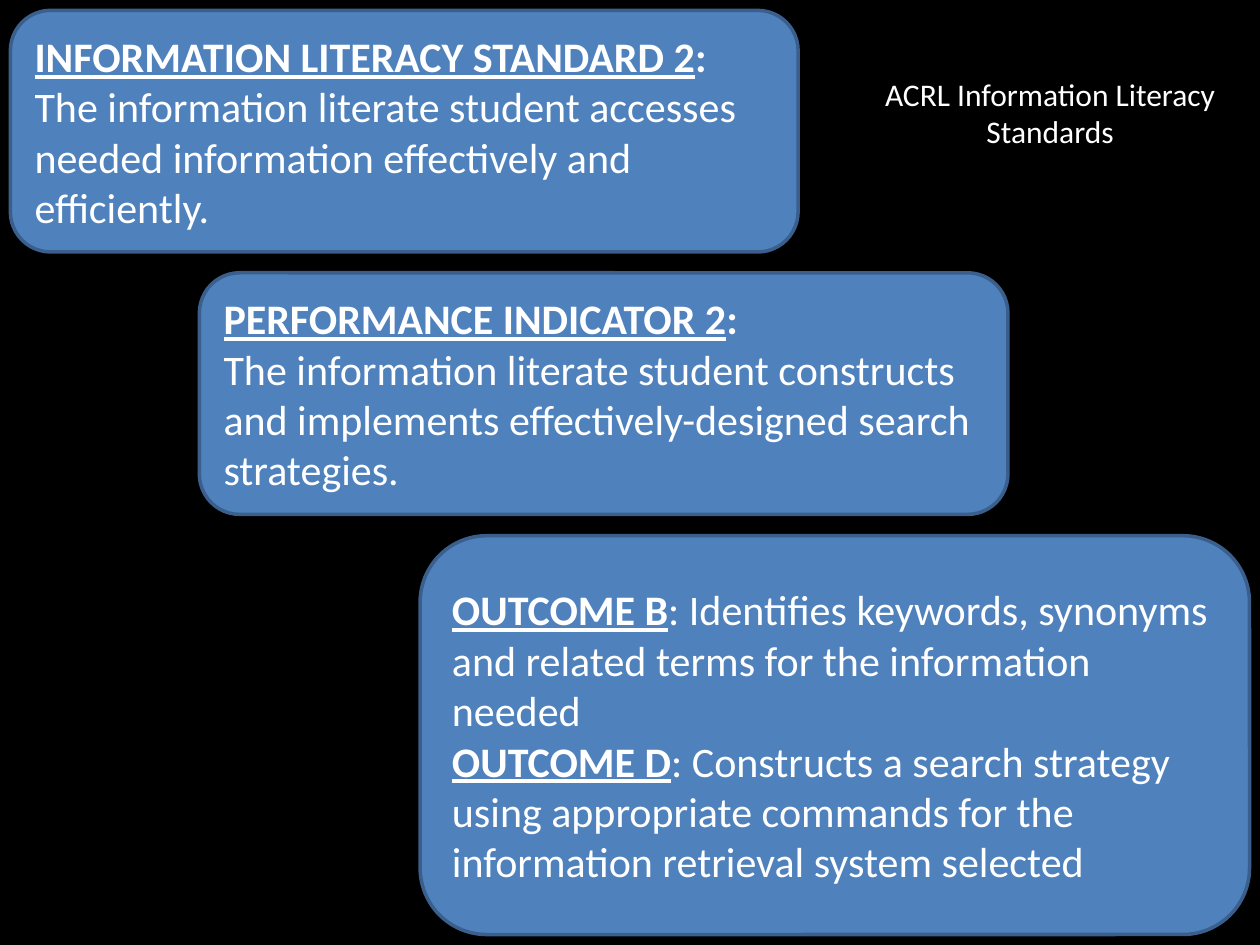
from dataclasses import dataclass

from pptx import Presentation
from pptx.dml.color import RGBColor
from pptx.enum.shapes import MSO_SHAPE
from pptx.enum.text import MSO_ANCHOR, MSO_AUTO_SIZE, PP_ALIGN
from pptx.slide import Slide
from pptx.text.text import TextFrame
from pptx.util import Cm, Pt

FONT_NAME = "Calibri"
BACKGROUND = "000000"
CARD_FILL = "4F81BD"
CARD_LINE = "3A5F8C"
TEXT_COLOR = "FFFFFF"


@dataclass(frozen=True)
class TextRun:
    text: str
    bold: bool = False
    underline: bool = False


@dataclass(frozen=True)
class Box:
    left: float
    top: float
    width: float
    height: float

    def lengths(self) -> tuple[Cm, Cm, Cm, Cm]:
        return Cm(self.left), Cm(self.top), Cm(self.width), Cm(self.height)


@dataclass(frozen=True)
class Card:
    box: Box
    paragraphs: list[list[TextRun]]


def heading(text: str) -> TextRun:
    return TextRun(text, bold=True, underline=True)


CARDS = [
    Card(Box(0.21, 0.21, 15.88, 4.87), [
        [heading("INFORMATION LITERACY STANDARD 2"), TextRun(":", bold=True)],
        [TextRun("The information literate student accesses needed information "
                 "effectively and efficiently.")],
    ]),
    Card(Box(4.02, 5.5, 16.3, 4.87), [
        [heading("PERFORMANCE INDICATOR 2"), TextRun(":", bold=True)],
        [TextRun("The information literate student constructs and implements "
                 "effectively-designed search strategies.")],
    ]),
    Card(Box(8.47, 10.8, 16.72, 8.04), [
        [heading("OUTCOME B"),
         TextRun(": Identifies keywords, synonyms and related terms for the "
                 "information needed")],
        [heading("OUTCOME D"),
         TextRun(": Constructs a search strategy using appropriate commands for "
                 "the information retrieval system selected")],
    ]),
]
TITLE_BOX = Box(17.36, 1.38, 7.62, 1.8)
TITLE = [[TextRun("ACRL Information Literacy Standards")]]


def color(value: str) -> RGBColor:
    return RGBColor.from_string(value)


def write_text(frame: TextFrame, paragraphs: list[list[TextRun]], size: int,
               alignment: PP_ALIGN) -> None:
    frame.word_wrap = True
    for index, runs in enumerate(paragraphs):
        paragraph = frame.add_paragraph() if index else frame.paragraphs[0]
        paragraph.alignment = alignment
        for item in runs:
            run = paragraph.add_run()
            run.text = item.text
            run.font.name = FONT_NAME
            run.font.size = Pt(size)
            run.font.bold = item.bold
            run.font.underline = item.underline
            run.font.color.rgb = color(TEXT_COLOR)


def draw_card(slide: Slide, card: Card) -> None:
    shape = slide.shapes.add_shape(MSO_SHAPE.ROUNDED_RECTANGLE, *card.box.lengths())
    shape.shadow.inherit = False
    shape.fill.solid()
    shape.fill.fore_color.rgb = color(CARD_FILL)
    shape.line.color.rgb = color(CARD_LINE)
    shape.line.width = Pt(2)
    shape.text_frame.vertical_anchor = MSO_ANCHOR.MIDDLE
    write_text(shape.text_frame, card.paragraphs, 24, PP_ALIGN.LEFT)


def draw_title(slide: Slide) -> None:
    frame = slide.shapes.add_textbox(*TITLE_BOX.lengths()).text_frame
    write_text(frame, TITLE, 18, PP_ALIGN.CENTER)
    frame.auto_size = MSO_AUTO_SIZE.SHAPE_TO_FIT_TEXT


def main() -> None:
    presentation = Presentation()
    presentation.slide_width = Cm(25.4)
    presentation.slide_height = Cm(19.05)
    slide = presentation.slides.add_slide(presentation.slide_layouts[6])
    slide.background.fill.solid()
    slide.background.fill.fore_color.rgb = color(BACKGROUND)
    for card in CARDS:
        draw_card(slide, card)
    draw_title(slide)
    presentation.save("out.pptx")


if __name__ == "__main__":
    main()
